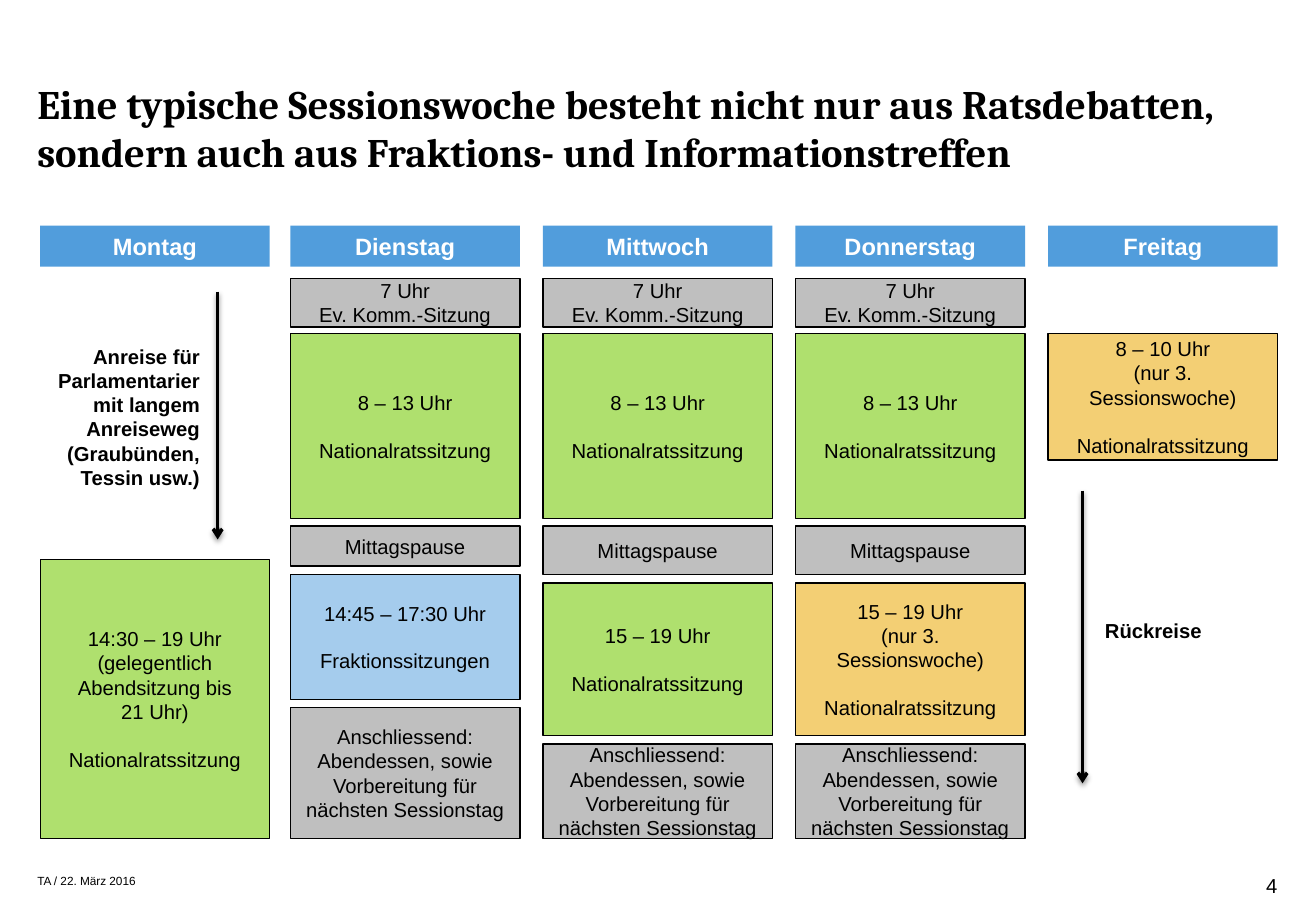
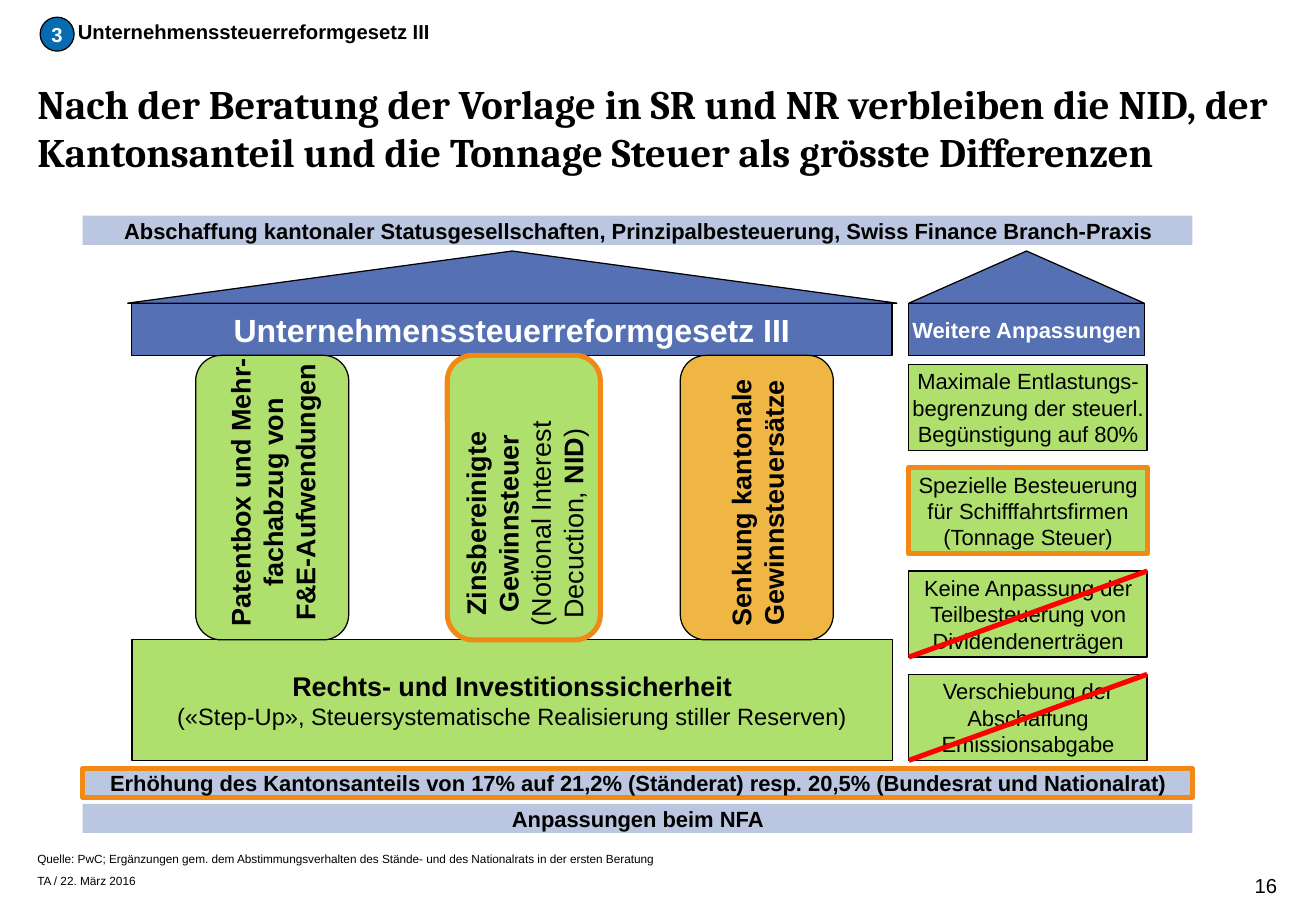
from dataclasses import dataclass
from typing import Optional

from lxml import etree
from pptx import Presentation
from pptx.dml.color import RGBColor
from pptx.enum.shapes import MSO_CONNECTOR, MSO_SHAPE
from pptx.enum.text import MSO_ANCHOR, PP_ALIGN
from pptx.oxml.ns import qn
from pptx.util import Cm, Pt

RECT = MSO_SHAPE.RECTANGLE
ROUND = MSO_SHAPE.ROUNDED_RECTANGLE
TRIANGLE = MSO_SHAPE.ISOSCELES_TRIANGLE
OVAL = MSO_SHAPE.OVAL
STRAIGHT = MSO_CONNECTOR.STRAIGHT
LEFT, CENTER, RIGHT = PP_ALIGN.LEFT, PP_ALIGN.CENTER, PP_ALIGN.RIGHT
TOP, MIDDLE = MSO_ANCHOR.TOP, MSO_ANCHOR.MIDDLE

COLORS = {
    "black": "000000", "white": "FFFFFF", "day": "519DDC", "green": "AFE06E",
    "sky": "A5CCED", "sand": "F3CF74", "grey": "BFBFBF", "roof": "5571B4",
    "gold": "EFB643", "band": "BBC6E1", "orange": "F18917", "red": "FF0000",
    "badge": "066BB0",
}
BODY, HEAD = "Arial", "Cambria"
MARGINS = (0.24, 0.13)
NO_MARGINS = (0, 0)


@dataclass
class Run:
    text: str
    bold: bool = False


@dataclass
class Para:
    runs: list[Run]
    size: float = 12
    gap: float = 0


@dataclass
class Box:
    x: float
    y: float
    w: float
    h: float
    paras: list[Para]
    fill: str
    line: Optional[str] = "black"
    weight: float = 0.75
    color: str = "black"
    shape: int = RECT
    wrap: bool = True
    upright: bool = False
    margins: tuple[float, float] = MARGINS


def lines(*texts: str, size: float = 12, bold: bool = False) -> list[Para]:
    return [Para([Run(t, bold)], size) for t in texts]


def event(*texts: str) -> list[Para]:
    paras = lines(*texts)
    paras[-1].gap = 14
    return paras


def rgb(name: str) -> RGBColor:
    return RGBColor.from_string(COLORS[name])


def write(tf, paras: list[Para], color: str, align, anchor, wrap: bool,
          margins: tuple[float, float], font: str = BODY) -> None:
    tf.word_wrap = wrap
    tf.vertical_anchor = anchor
    tf.margin_left = tf.margin_right = Cm(margins[0])
    tf.margin_top = tf.margin_bottom = Cm(margins[1])
    for i, para in enumerate(paras):
        p = tf.add_paragraph() if i else tf.paragraphs[0]
        p.alignment = align
        if para.gap:
            p.space_before = Pt(para.gap)
        for run in para.runs:
            r = p.add_run()
            r.text = run.text
            r.font.name = font
            r.font.size = Pt(para.size)
            r.font.bold = run.bold
            r.font.color.rgb = rgb(color)


def add_text(s, x: float, y: float, w: float, h: float, paras: list[Para],
             align=LEFT, wrap: bool = True, margins=NO_MARGINS,
             font: str = BODY) -> None:
    tb = s.shapes.add_textbox(Cm(x), Cm(y), Cm(w), Cm(h))
    write(tb.text_frame, paras, "black", align, TOP, wrap, margins, font)


def add_box(s, box: Box) -> None:
    sp = s.shapes.add_shape(box.shape, Cm(box.x), Cm(box.y), Cm(box.w), Cm(box.h))
    sp.shadow.inherit = False
    sp.fill.solid()
    sp.fill.fore_color.rgb = rgb(box.fill)
    if box.line:
        sp.line.color.rgb = rgb(box.line)
        sp.line.width = Pt(box.weight)
    else:
        sp.line.fill.background()
    tf = sp.text_frame
    write(tf, box.paras, box.color, CENTER, MIDDLE, box.wrap, box.margins)
    if box.upright:
        sp.rotation = 180
        tf._txBody.bodyPr.set("vert", "eaVert")


def add_line(s, x1: float, y1: float, x2: float, y2: float, color: str,
             weight: float, arrow: bool = False) -> None:
    c = s.shapes.add_connector(STRAIGHT, Cm(x1), Cm(y1), Cm(x2), Cm(y2))
    c.line.color.rgb = rgb(color)
    c.line.width = Pt(weight)
    spPr = c._element.spPr
    effects = etree.SubElement(spPr, qn("a:effectLst"))
    if arrow:
        etree.SubElement(spPr.find(qn("a:ln")), qn("a:tailEnd"), type="arrow")
        shadow = etree.SubElement(effects, qn("a:outerShdw"), blurRad="39370",
                                  dist="20320", dir="5400000", rotWithShape="0")
        tint = etree.SubElement(shadow, qn("a:srgbClr"), val=COLORS["black"])
        etree.SubElement(tint, qn("a:alpha"), val="38000")


def new_slide(prs, title: str, number: str):
    s = prs.slides.add_slide(prs.slide_layouts[6])
    add_text(s, 0.78, 1.65, 25.94, 1.98, lines(title, size=24, bold=True), font=HEAD)
    add_text(s, 0.78, 18.28, 2.13, 0.3, lines("TA / 22. März 2016", size=7), wrap=False)
    add_text(s, 25.2, 18.26, 1.5, 0.51, lines(number), align=RIGHT)
    return s


def week_slide(prs) -> None:
    s = new_slide(prs, "Eine typische Sessionswoche besteht nicht nur aus Ratsdebatten, "
                       "sondern auch aus Fraktions- und Informationstreffen", "4")
    cols = [0.84] + [6.07 + 5.28 * i for i in range(4)]
    monday, tuesday, wednesday, thursday, friday = cols
    width, bottom, gap = 4.8, 17.53, 0.17
    days = ("Montag", "Dienstag", "Mittwoch", "Donnerstag", "Freitag")
    for x, day in zip(cols, days):
        add_box(s, Box(x, 4.72, width, 0.86, lines(day, size=14, bold=True),
                       "day", None, color="white"))

    council = "Nationalratssitzung"
    third_week = "(nur 3. Sessionswoche)"
    evening = "Anschliessend: Abendessen, sowie Vorbereitung für nächsten Sessionstag"
    afternoons = (
        (tuesday, 0.84, 2.62, "sky", event("14:45 – 17:30 Uhr", "Fraktionssitzungen")),
        (wednesday, 1.02, 3.2, "green", event("15 – 19 Uhr", council)),
        (thursday, 1.02, 3.2, "sand", event("15 – 19 Uhr", third_week, council)),
    )
    for x, lunch, length, fill, paras in afternoons:
        start = 11 + lunch + gap
        end = start + length + gap
        for y, h, colour, content in (
            (5.82, 1.02, "grey", lines("7 Uhr", "Ev. Komm.-Sitzung")),
            (6.98, 3.86, "green", event("8 – 13 Uhr", council)),
            (11, lunch, "grey", lines("Mittagspause")),
            (start, length, fill, paras),
            (end, bottom - end, "grey", lines(evening)),
        ):
            add_box(s, Box(x, y, width, h, content, colour))

    add_box(s, Box(monday, 11.7, width, bottom - 11.7,
                   event("14:30 – 19 Uhr", "(gelegentlich Abendsitzung bis",
                         "21 Uhr)", council), "green"))
    add_box(s, Box(friday, 6.98, width, 2.64,
                   event("8 – 10 Uhr", third_week, council), "sand"))

    add_line(s, 4.55, 6.1, 4.55, 11.28, "black", 2, arrow=True)
    add_line(s, 22.63, 10.26, 22.63, 16.38, "black", 2, arrow=True)
    add_text(s, 0.76, 7.06, 3.66, 3.35,
             lines("Anreise für Parlamentarier mit langem Anreiseweg "
                   "(Graubünden, Tessin usw.)", bold=True),
             align=RIGHT, margins=MARGINS)
    add_text(s, 22.86, 12.8, 3.33, 0.79, lines("Rückreise", bold=True), margins=MARGINS)


def reform_slide(prs) -> None:
    s = new_slide(prs, "Nach der Beratung der Vorlage in SR und NR verbleiben die NID, der "
                       "Kantonsanteil und die Tonnage Steuer als grösste Differenzen", "16")
    law = "Unternehmenssteuerreformgesetz III"
    add_text(s, 0.78, 17.81, 14.1, 0.3,
             lines("Quelle: PwC; Ergänzungen gem. dem Abstimmungsverhalten des Stände- "
                   "und des Nationalrats in der ersten Beratung", size=7))
    add_text(s, 1.63, 0.41, 7.54, 0.51, lines(law, bold=True), wrap=False)
    add_box(s, Box(0.84, 0.36, 0.71, 0.71, lines("3", bold=True), "badge",
                   color="white", shape=OVAL, margins=NO_MARGINS))

    base = lines("Rechts- und Investitionssicherheit", size=16, bold=True)
    base += lines("(«Step-Up», Steuersystematische Realisierung stiller Reserven)", size=14)
    add_box(s, Box(2.76, 13.38, 15.9, 2.52, base, "green", wrap=False))

    for x, w, roof_x, roof_w, label, size in (
        (2.75, 15.9, 2.67, 16.08, law, 19),
        (19, 4.92, 19, 4.92, "Weitere Anpassungen", 13),
    ):
        add_box(s, Box(x, 6.34, w, 1.09, lines(label, size=size, bold=True),
                       "roof", color="white", wrap=False))
        add_box(s, Box(roof_x, 5.25, roof_w, 1.09, [], "roof", shape=TRIANGLE))

    nid = lines("Zinsbereinigte", "Gewinnsteuer", size=16, bold=True)
    nid += lines("(Notional Interest", size=16)
    nid.append(Para([Run("Decuction, "), Run("NID", True), Run(")")], 16))
    patent = lines("Patentbox und Mehr-", "fachabzug von", "F&E-Aufwendungen",
                   size=16, bold=True)
    rates = lines("Senkung kantonale", "Gewinnsteuersätze", size=16, bold=True)
    for x, paras, fill, line, weight in (
        (4.09, patent, "green", "black", 0.75),
        (14.22, rates, "gold", "black", 0.75),
        (9.35, nid, "green", "orange", 3),
    ):
        add_box(s, Box(x, 7.43, 3.2, 5.95, paras, fill, line, weight,
                       shape=ROUND, wrap=False, upright=True))

    measures = (
        (("Maximale Entlastungs-", "begrenzung der steuerl.", "Begünstigung auf 80%"),
         False, False),
        (("Spezielle Besteuerung", "für Schifffahrtsfirmen", "(Tonnage Steuer)"),
         True, False),
        (("Keine Anpassung der", "Teilbesteuerung von", "Dividendenerträgen"),
         False, True),
        (("Verschiebung der", "Abschaffung", "Emissionsabgabe"), False, True),
    )
    x, w, h = 19, 4.98, 1.8
    for i, (texts, disputed, dropped) in enumerate(measures):
        y = 7.62 + 2.16 * i
        add_box(s, Box(x, y, w, h, lines(*texts, size=13), "green",
                       "orange" if disputed else "black", 3 if disputed else 0.75,
                       wrap=False))
        if dropped:
            add_line(s, x, y + h, x + w, y, "red", 3)

    for y, label, line in (
        (4.51, "Abschaffung kantonaler Statusgesellschaften, Prinzipalbesteuerung, "
               "Swiss Finance Branch-Praxis", None),
        (16.07, "Erhöhung des Kantonsanteils von 17% auf 21,2% (Ständerat) resp. "
                "20,5% (Bundesrat und Nationalrat)", "orange"),
        (16.81, "Anpassungen beim NFA", None),
    ):
        add_box(s, Box(1.73, y, 23.2, 0.61, lines(label, size=13, bold=True),
                       "band", line, 3))


def main() -> None:
    prs = Presentation()
    prs.slide_width, prs.slide_height = Cm(27.51), Cm(19.05)
    week_slide(prs)
    reform_slide(prs)
    prs.save("out.pptx")


if __name__ == "__main__":
    main()
